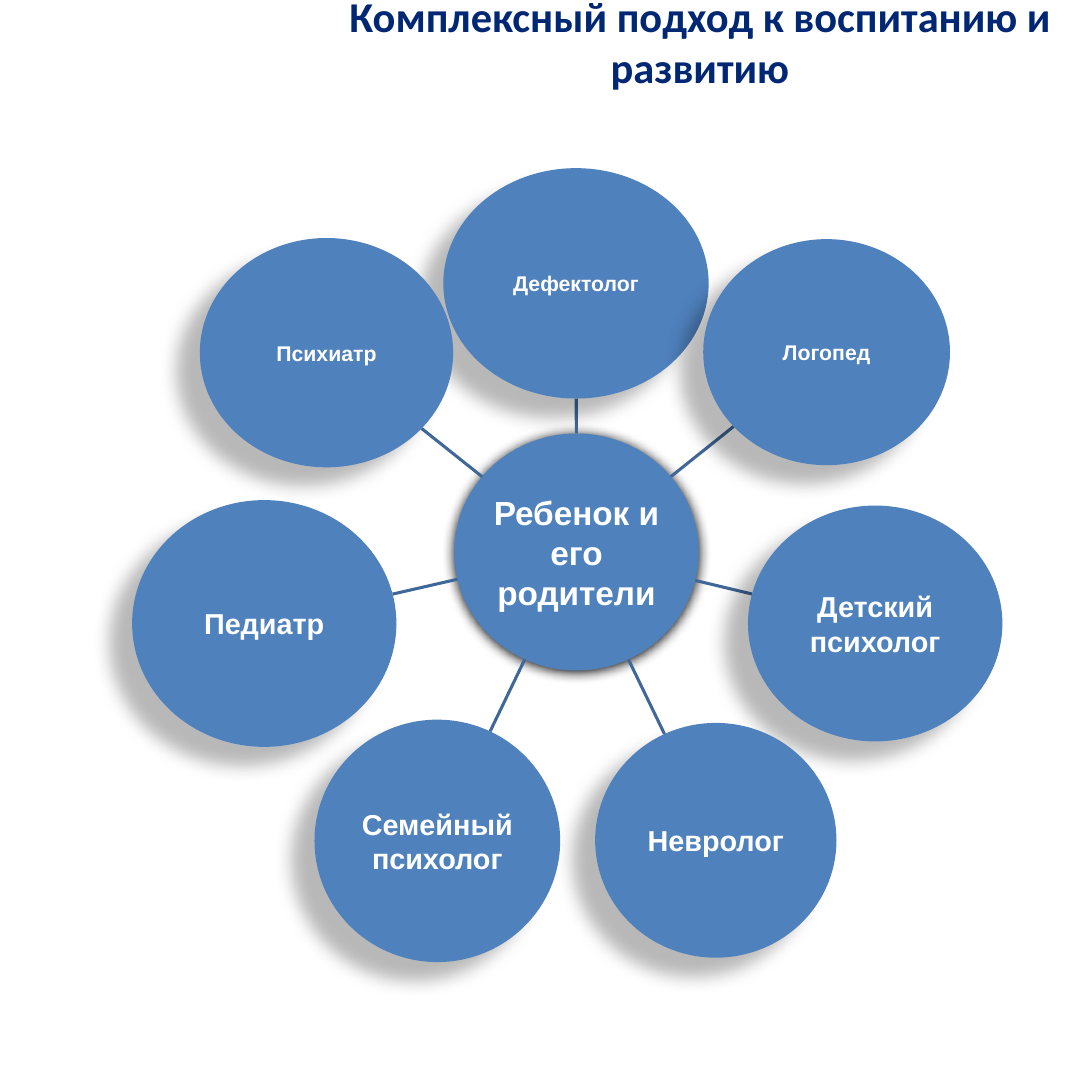
import math

import pptx
import pptx.dml.color
import pptx.enum.shapes
import pptx.enum.text
import pptx.oxml
import pptx.oxml.ns
import pptx.util

Inches = pptx.util.Inches
Pt = pptx.util.Pt
RGBColor = pptx.dml.color.RGBColor

BLUE = RGBColor(0x4F, 0x81, 0xBD)
LINE = RGBColor(0x3F, 0x67, 0x97)
NAVY = RGBColor(0x00, 0x27, 0x74)
WHITE = RGBColor(0xFF, 0xFF, 0xFF)

HUB_SHADOW = dict(alpha=100, blur=8.5, dist=1, angle=90)
SPOKE_SHADOW = dict(alpha=28, blur=11.8, dist=19.7, angle=141)

HUB = (4.16, 3.97, 2.24, 2.17)
SPECIALISTS = [
    ("Дефектолог", 14, (4.06, 1.54, 2.43, 2.11)),
    ("Логопед", 14, (6.44, 2.19, 2.26, 2.07)),
    ("Детский психолог", 19, (6.85, 4.63, 2.33, 2.16)),
    ("Невролог", 19, (5.45, 6.62, 2.21, 2.15)),
    ("Семейный психолог", 19, (2.88, 6.59, 2.25, 2.22)),
    ("Педиатр", 19, (1.21, 4.58, 2.42, 2.26)),
    ("Психиатр", 14, (1.83, 2.18, 2.32, 2.1)),
]


def write(tf, text, size, color, font="Arial", anchor="MIDDLE", inset=None):
    tf.word_wrap = True
    tf.vertical_anchor = pptx.enum.text.MSO_ANCHOR[anchor]
    if inset is not None:
        tf.margin_left = tf.margin_right = Inches(inset)
        tf.margin_top = tf.margin_bottom = Inches(inset)
    p = tf.paragraphs[0]
    p.alignment = pptx.enum.text.PP_ALIGN.CENTER
    r = p.add_run()
    r.text = text
    r.font.name = font
    r.font.size = Pt(size)
    r.font.bold = True
    r.font.color.rgb = color


def edge_point(box, target):
    left, top, width, height = box
    cx, cy = left + width / 2, top + height / 2
    dx = target[0] + target[2] / 2 - cx
    dy = target[1] + target[3] / 2 - cy
    t = 1 / math.hypot(dx / (width / 2), dy / (height / 2))
    return Inches(cx + dx * t), Inches(cy + dy * t)


class Diagram:
    def __init__(self, slide):
        self.s = slide
        self.fill = BLUE
        self.line = LINE
        self.line_width = Pt(2)

    def title(self, text, box):
        tb = self.s.shapes.add_textbox(*map(Inches, box))
        write(tb.text_frame, text, 28, NAVY, font="Calibri", anchor="BOTTOM")

    def circle(self, text, size, box, shadow):
        sp = self.s.shapes.add_shape(
            pptx.enum.shapes.MSO_SHAPE.OVAL, *map(Inches, box))
        sp.fill.solid()
        sp.fill.fore_color.rgb = self.fill
        sp.line.fill.background()
        sp.shadow.inherit = False
        self.add_shadow(sp, **shadow)
        write(sp.text_frame, text, size, WHITE, inset=0.01)

    def add_shadow(self, sp, alpha, blur, dist, angle):
        effects = sp._element.spPr.find(pptx.oxml.ns.qn("a:effectLst"))
        effects.append(pptx.oxml.parse_xml(
            f'<a:outerShdw {pptx.oxml.ns.nsdecls("a")} blurRad="{Pt(blur)}" '
            f'dist="{Pt(dist)}" dir="{angle * 60000}" algn="ctr" rotWithShape="0">'
            f'<a:srgbClr val="000000"><a:alpha val="{alpha * 1000}"/></a:srgbClr>'
            '</a:outerShdw>'))

    def spoke(self, start, end):
        c = self.s.shapes.add_connector(
            pptx.enum.shapes.MSO_CONNECTOR.STRAIGHT,
            *edge_point(start, end), *edge_point(end, start))
        c.line.color.rgb = self.line
        c.line.width = self.line_width
        c._element.spPr.append(pptx.oxml.parse_xml(
            f'<a:effectLst {pptx.oxml.ns.nsdecls("a")}/>'))


def main():
    prs = pptx.Presentation()
    prs.slide_width = prs.slide_height = Inches(10)
    diagram = Diagram(prs.slides.add_slide(prs.slide_layouts[6]))

    diagram.circle("Ребенок и его родители", 22, HUB, HUB_SHADOW)
    for name, size, box in SPECIALISTS:
        diagram.spoke(HUB, box)
        diagram.circle(name, size, box, SPOKE_SHADOW)
    diagram.title("Комплексный подход к воспитанию и развитию",
                  (2.86, -0.28, 7.1, 1.17))

    prs.save("out.pptx")


if __name__ == "__main__":
    main()
